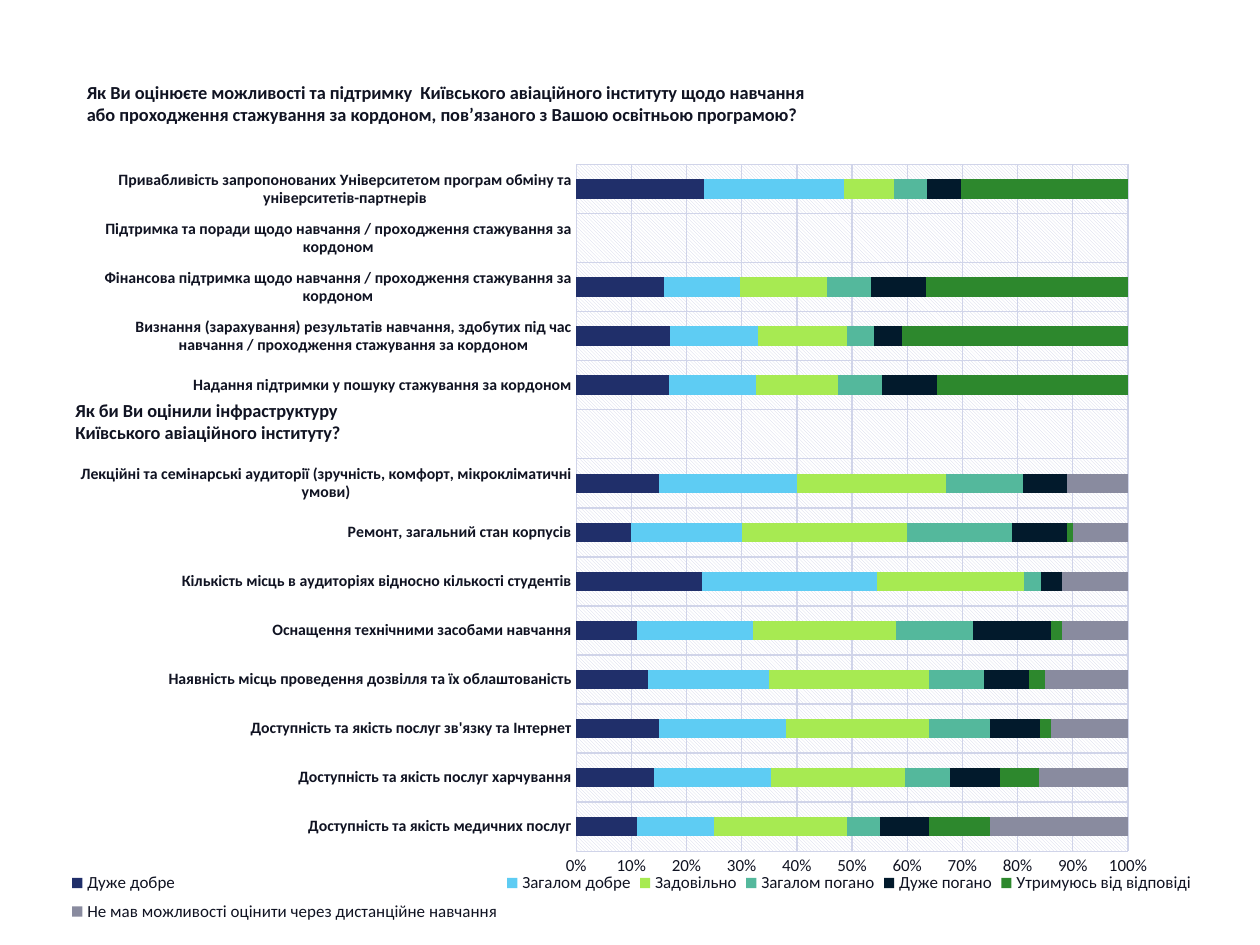
from lxml.etree import SubElement
from pptx import Presentation
from pptx.chart.data import CategoryChartData
from pptx.dml.color import RGBColor
from pptx.enum.chart import XL_AXIS_CROSSES as Crosses
from pptx.enum.chart import XL_CHART_TYPE as ChartType
from pptx.enum.chart import XL_LEGEND_POSITION as LegendPos
from pptx.enum.chart import XL_TICK_MARK as Tick
from pptx.oxml import parse_xml
from pptx.oxml.ns import nsdecls, qn
from pptx.util import Cm, Pt

INK = RGBColor(0x10, 0x13, 0x22)
GRID = RGBColor(0xD0, 0xD4, 0xE9)
NAVY = RGBColor(0x20, 0x2F, 0x6A)
SKY = RGBColor(0x5E, 0xCC, 0xF3)
LIME = RGBColor(0xA7, 0xEA, 0x52)
TEAL = RGBColor(0x54, 0xB8, 0x9C)
MIDNIGHT = RGBColor(0x02, 0x1A, 0x2C)
GREEN = RGBColor(0x2D, 0x88, 0x2D)
GREY = RGBColor(0x89, 0x8B, 0x9F)
FONT = "Calibri"

# Rows run from the bottom of the chart to the top
ASPECTS = [
    "Доступність та якість медичних послуг",
    "Доступність та якість послуг харчування",
    "Доступність та якість послуг зв'язку та Інтернет",
    "Наявність місць проведення дозвілля та їх облаштованість",
    "Оснащення технічними засобами навчання",
    "Кількість місць в аудиторіях відносно кількості студентів",
    "Ремонт, загальний стан корпусів",
    "Лекційні та семінарські аудиторії (зручність, комфорт, мікрокліматичні умови)",
    "",
    "Надання підтримки у пошуку стажування за кордоном",
    "Визнання (зарахування) результатів навчання, здобутих під час навчання / "
    "проходження стажування за кордоном",
    "Фінансова підтримка щодо навчання / проходження стажування за кордоном",
    "Підтримка та поради щодо навчання / проходження стажування за кордоном",
    "Привабливість запропонованих Університетом програм обміну та університетів-партнерів",
]
NA = None
ANSWERS = [
    ("Дуже добре", NAVY, [11, 14, 15, 13, 11, 23, 10, 15, NA, 17, 17, 16, NA, 23]),
    ("Загалом добре", SKY, [14, 21, 23, 22, 21, 32, 20, 25, NA, 16, 16, 14, NA, 25]),
    ("Задовільно", LIME, [24, 24, 26, 29, 26, 27, 30, 27, NA, 15, 16, 16, NA, 9]),
    ("Загалом погано", TEAL, [6, 8, 11, 10, 14, 3, 19, 14, NA, 8, 5, 8, NA, 6]),
    ("Дуже погано", MIDNIGHT, [9, 9, 9, 8, 14, 4, 10, 8, NA, 10, 5, 10, NA, 6]),
    ("Утримуюсь від відповіді", GREEN, [11, 7, 2, 3, 2, 0, 1, 0, NA, 35, 41, 37, NA, 30]),
    ("Не мав можливості оцінити через дистанційне навчання", GREY,
     [25, 16, 14, 15, 12, 12, 10, 11] + [NA] * 6),
]
QUESTIONS = [
    (Cm(1.5), Cm(1.52), Cm(22.2),
     ["Як Ви оцінюєте можливості та підтримку  Київського авіаційного інституту щодо навчання",
      "або проходження стажування за кордоном, пов’язаного з Вашою освітньою програмою?"]),
    (Cm(1.27), Cm(7.92), Cm(12.8),
     ["Як би Ви оцінили інфраструктуру", "Київського авіаційного інституту?"]),
]


def place(part, index, inner, x, y, w, h):
    """Give a chart part a fixed place, in fractions of the chart."""
    for old in part.findall(qn("c:layout")):
        part.remove(old)
    layout = parse_xml(f"<c:layout {nsdecls('c')}/>")
    manual = SubElement(layout, qn("c:manualLayout"))
    settings = [("layoutTarget", "inner")] if inner else []
    settings += [("xMode", "edge"), ("yMode", "edge"), ("x", x), ("y", y), ("w", w), ("h", h)]
    for tag, value in settings:
        SubElement(manual, qn(f"c:{tag}")).set("val", str(value))
    part.insert(index, layout)


prs = Presentation()
prs.slide_width, prs.slide_height = Cm(25.4), Cm(19.05)
slide = prs.slides.add_slide(prs.slide_layouts[6])

# Survey chart
survey = CategoryChartData(number_format="0")
survey.categories = ASPECTS
for answer, _, shares in ANSWERS:
    survey.add_series(answer, shares)
chart = slide.shapes.add_chart(ChartType.BAR_STACKED_100, Cm(1.27), Cm(2.21),
                               Cm(22.94), Cm(16.54), survey).chart
chart.has_title = False
chart.font.name, chart.font.size, chart.font.color.rgb = FONT, Pt(9.7), INK

bars = chart.plots[0]
bars.gap_width, bars.overlap = 150, 100
bars.vary_by_categories = False
for series, (_, color, _) in zip(bars.series, ANSWERS):
    series.format.fill.solid()
    series.format.fill.fore_color.rgb = color
    series.invert_if_negative = False

# Axes: percentages along the top
aspects, percent = chart.category_axis, chart.value_axis
for axis in (aspects, percent):
    axis.major_tick_mark = axis.minor_tick_mark = Tick.NONE
    axis.has_major_gridlines = True
    for line in (axis.format.line, axis.major_gridlines.format.line):
        line.color.rgb, line.width = GRID, Pt(0.75)
aspects.crosses = Crosses.MAXIMUM
labels = aspects.tick_labels.font
labels.name, labels.size, labels.bold, labels.color.rgb = FONT, Pt(9), True, INK
percent.minimum_scale, percent.maximum_scale, percent.major_unit = 0, 1, 0.1
percent.tick_labels.number_format = "0%"
percent.tick_labels.number_format_is_linked = False

# Legend
chart.has_legend = True
legend = chart.legend
legend.position = LegendPos.BOTTOM
legend.include_in_layout = True
place(legend._element, 1, False, 0, 0.92, 1, 0.08)

# Hatched plot area
plot_area = chart._chartSpace.chart.plotArea
place(plot_area, 0, True, 0.451, 0.067, 0.485, 0.837)
plot_area.append(parse_xml(
    f'<c:spPr {nsdecls("c", "a")}><a:pattFill prst="ltDnDiag">'
    f'<a:fgClr><a:srgbClr val="{GRID}"/></a:fgClr>'
    '<a:bgClr><a:srgbClr val="FFFFFF"/></a:bgClr></a:pattFill></c:spPr>'))

# Questions above each group of bars
for left, top, width, lines in QUESTIONS:
    frame = slide.shapes.add_textbox(left, top, width, Cm(1.14)).text_frame
    frame.word_wrap = True
    question = frame.paragraphs[0]
    for number, line in enumerate(lines):
        if number:
            question.add_line_break()
        run = question.add_run()
        run.text = line
        run.font.name, run.font.size, run.font.bold = FONT, Pt(10.5), True
        run.font.color.rgb = INK

prs.save("out.pptx")
